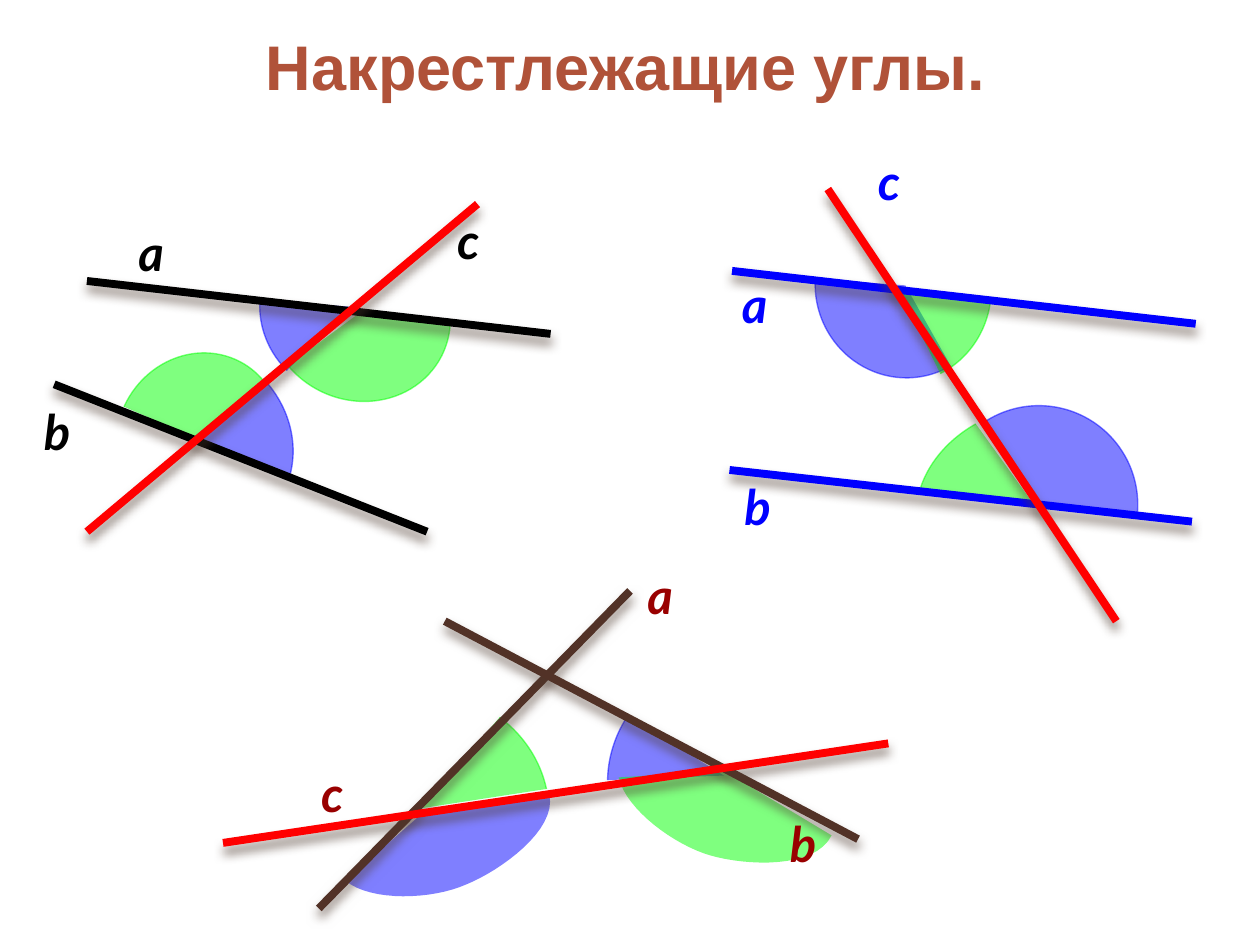
from dataclasses import dataclass

from lxml.etree import SubElement
from pptx import Presentation
from pptx.dml.color import RGBColor
from pptx.enum.shapes import MSO_CONNECTOR, MSO_SHAPE
from pptx.enum.text import MSO_ANCHOR, MSO_AUTO_SIZE, PP_ALIGN
from pptx.oxml.ns import qn
from pptx.util import Inches, Pt

BLUE, GREEN, RED, BLACK = "0000FF", "00FF00", "FF0000", "000000"
BROWN, DARK_RED, SHADOW = "523227", "990000", "4E3B30"
TITLE_STOPS = ((0, "E19786"), (75, "B05239"), (100, "A7340D"))
LABEL_FORMAT = {"name": "Lato", "size": Pt(28), "bold": True, "italic": True}
TITLE_FORMAT = {"name": "Arial", "size": Pt(36), "bold": True}
CURVE_STEPS = 16

Point = tuple[float, float]


@dataclass
class AngleArc:
    box: tuple[float, float, float, float]
    rotation: float
    adjustments: tuple[float, float]
    color: str


@dataclass
class AngleCurve:
    """A sector bounded by joined cubic curves and closed through its corner."""
    start: Point
    curves: list[tuple[Point, Point, Point]]
    corner: Point
    color: str


@dataclass
class Line:
    start: Point
    end: Point
    color: str


@dataclass
class Label:
    text: str
    left: float
    top: float
    color: str


ANGLES = [
    AngleArc((4.85, 5.21, 1.79, 1.89), 227.8, (185.976, 206.59), BLUE),
    AngleCurve((4.36, 6.31), [((4.42, 6.59), (3.97, 6.91), (3.7, 7.02)),
                              ((3.43, 7.14), (2.95, 7.16), (2.74, 6.99))], (3.37, 6.44), BLUE),
    AngleArc((7.46, 3.22, 1.57, 1.57), 335.7, (156.796, 17.904), BLUE),
    AngleArc((6.47, 1.53, 1.43, 1.47), 166.8, (152.283, 10.506), BLUE),
    AngleArc((0.63, 2.73, 1.72, 1.55), 32.4, (173.565, 207.982), BLUE),
    AngleArc((2.06, 1.72, 1.46, 1.43), 193.7, (181, 210.469), BLUE),
    AngleCurve((6.6, 6.63), [((6.47, 6.9), (5.92, 6.87), (5.64, 6.79)),
                             ((5.36, 6.71), (4.97, 6.43), (4.91, 6.17))], (5.75, 6.12), GREEN),
    AngleArc((2.33, 5.48, 2.03, 1.87), 11.5, (179.521, 203.849), GREEN),
    AngleArc((7.43, 3.06, 1.56, 1.9), 254.9, (174.572, 203.598), GREEN),
    AngleArc((6.36, 1.54, 1.53, 1.48), 73.9, (175.868, 209.951), GREEN),
    AngleArc((0.88, 2.84, 1.4, 1.3), 297.9, (159.54, 13.722), GREEN),
    AngleArc((2.16, 1.75, 1.37, 1.48), 116.9, (150.569, 16.079), GREEN),
]
LINES = [
    Line((0.69, 2.23), (4.37, 2.65), BLACK),
    Line((0.43, 3.05), (3.39, 4.22), BLACK),
    Line((0.69, 4.22), (3.79, 1.62), RED),
    Line((5.81, 2.15), (9.49, 2.57), BLUE),
    Line((5.79, 3.73), (9.46, 4.14), BLUE),
    Line((6.57, 1.5), (8.86, 4.93), RED),
    Line((2.53, 7.21), (5, 4.69), BROWN),
    Line((3.53, 4.93), (6.81, 6.66), BROWN),
    Line((1.77, 6.69), (7.05, 5.9), RED),
]
LABELS = [
    Label("a", 1, 1.72, BLACK), Label("b", 0.25, 3.14, BLACK), Label("c", 3.53, 1.62, BLACK),
    Label("a", 5.79, 2.13, BLUE), Label("b", 5.81, 3.73, BLUE), Label("c", 6.87, 1.15, BLUE),
    Label("a", 5.04, 4.44, DARK_RED), Label("b", 6.17, 6.41, DARK_RED),
    Label("c", 2.45, 6.01, DARK_RED),
]


def rgb(value: str) -> RGBColor:
    return RGBColor.from_string(value)


def apply_format(target, values: dict) -> None:
    for name, value in values.items():
        setattr(target, name, value)


def fill_half_clear(shape, color: str) -> None:
    shape.shadow.inherit = False
    shape.fill.solid()
    shape.fill.fore_color.rgb = rgb(color)
    for node in shape._element.spPr.iter(qn("a:srgbClr")):
        SubElement(node, qn("a:alpha"), val="50000")


def draw_arc(page, angle: AngleArc) -> None:
    arc = page.shapes.add_shape(MSO_SHAPE.ARC, *map(Inches, angle.box))
    arc.rotation = angle.rotation
    for index, value in enumerate(angle.adjustments):
        arc.adjustments[index] = value
    arc.line.color.rgb = rgb(angle.color)
    arc.line.width = Pt(0.79)
    fill_half_clear(arc, angle.color)


def cubic_points(start: Point, first: Point, second: Point, end: Point) -> list[Point]:
    points = []
    for step in range(1, CURVE_STEPS + 1):
        t = step / CURVE_STEPS
        weights = ((1 - t) ** 3, 3 * t * (1 - t) ** 2, 3 * t * t * (1 - t), t ** 3)
        points.append(tuple(sum(weight * value for weight, value in zip(weights, axis))
                            for axis in zip(start, first, second, end)))
    return points


def draw_curve(page, angle: AngleCurve) -> None:
    points = [angle.start]
    for curve in angle.curves:
        points += cubic_points(points[-1], *curve)
    points.append(angle.corner)
    start, *rest = [(Inches(x), Inches(y)) for x, y in points]
    builder = page.shapes.build_freeform(*start)
    builder.add_line_segments(rest, close=True)
    sector = builder.convert_to_shape()
    sector.line.fill.background()
    fill_half_clear(sector, angle.color)


def draw_line(page, line: Line) -> None:
    connector = page.shapes.add_connector(
        MSO_CONNECTOR.STRAIGHT, *map(Inches, line.start + line.end))
    connector.line.color.rgb = rgb(line.color)
    connector.line.width = Pt(4.5)
    effects = SubElement(connector._element.spPr, qn("a:effectLst"))
    shadow = SubElement(effects, qn("a:outerShdw"), blurRad=str(Pt(6)), dist=str(Pt(4)),
                        dir="5400000", rotWithShape="0")
    color = SubElement(shadow, qn("a:srgbClr"), val=SHADOW)
    SubElement(color, qn("a:alpha"), val="60000")


def draw_label(page, label: Label) -> None:
    width = 0.36 if label.text == "c" else 0.41
    box = page.shapes.add_textbox(*map(Inches, (label.left, label.top, width, 0.57)))
    apply_format(box.text_frame, {"word_wrap": False,
                                  "auto_size": MSO_AUTO_SIZE.SHAPE_TO_FIT_TEXT})
    span = box.text_frame.paragraphs[0].add_run()
    span.text = label.text
    apply_format(span.font, LABEL_FORMAT)
    span.font.color.rgb = rgb(label.color)


def write_title(page, text: str) -> None:
    title = page.shapes.title
    apply_format(title, {"left": Inches(0.2), "top": Inches(0.13),
                         "width": Inches(9.53), "height": Inches(0.78)})
    apply_format(title.text_frame, {"word_wrap": False, "auto_size": MSO_AUTO_SIZE.NONE,
                                    "vertical_anchor": MSO_ANCHOR.MIDDLE})
    para = title.text_frame.paragraphs[0]
    para.alignment = PP_ALIGN.CENTER
    span = para.add_run()
    span.text = text
    apply_format(span.font, TITLE_FORMAT)
    span.font.fill.gradient()
    gradient = span.font._element.find(qn("a:gradFill"))
    stops = gradient.find(qn("a:gsLst"))
    for stop in list(stops):
        stops.remove(stop)
    for position, color in TITLE_STOPS:
        stop = SubElement(stops, qn("a:gs"), pos=str(position * 1000))
        SubElement(stop, qn("a:srgbClr"), val=color)
    gradient.find(qn("a:lin")).set("ang", "5400000")


def main() -> None:
    deck = Presentation()
    deck.slide_width, deck.slide_height = Inches(10), Inches(7.5)
    page = deck.slides.add_slide(deck.slide_layouts[5])
    write_title(page, "Накрестлежащие углы.")
    for angle in ANGLES:
        draw = draw_arc if isinstance(angle, AngleArc) else draw_curve
        draw(page, angle)
    for line in LINES:
        draw_line(page, line)
    for label in LABELS:
        draw_label(page, label)
    deck.save("out.pptx")


if __name__ == "__main__":
    main()
